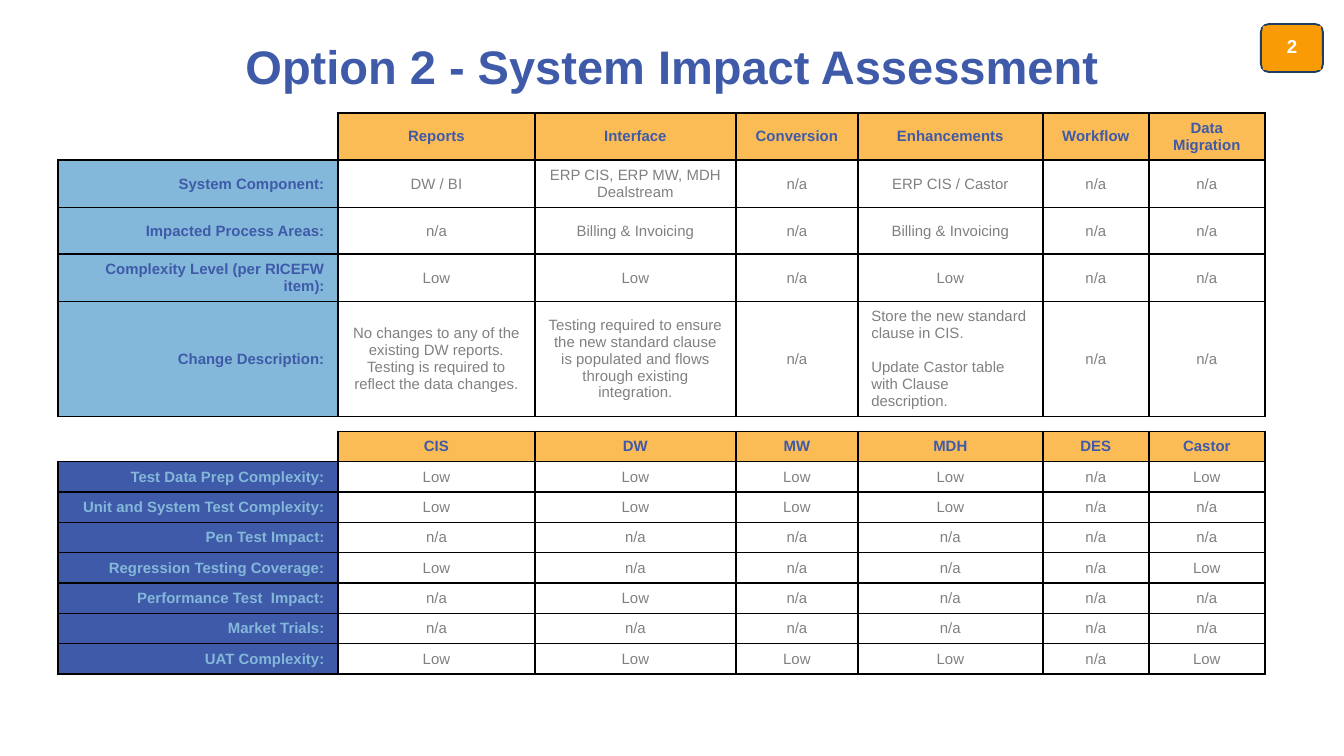
"""Build the Option 2 system impact assessment slide."""
import lxml.etree
import pptx
import pptx.dml.color
import pptx.enum.shapes
import pptx.enum.text
import pptx.oxml.ns
import pptx.util

HUES = {"navy": "3E5AA8", "sky": "84B8DA", "gold": "FCBC55", "grey": "808080",
        "amber": "F89B04", "ink": "1D3E61", "white": "FFFFFF", "black": "000000"}

TITLE = "Option 2 - System Impact Assessment"
PAGE = "2"
IMPACT = [
    ["", "Reports", "Interface", "Conversion", "Enhancements", "Workflow", "Data Migration"],
    ["System Component:", "DW / BI", "ERP CIS, ERP MW, MDH Dealstream", "n/a",
     "ERP CIS / Castor", "n/a", "n/a"],
    ["Impacted Process Areas:", "n/a", "Billing & Invoicing", "n/a",
     "Billing & Invoicing", "n/a", "n/a"],
    ["Complexity Level (per RICEFW item):", "Low", "Low", "n/a", "Low", "n/a", "n/a"],
    ["Change Description:",
     "No changes to any of the existing DW reports. "
     "Testing is required to reflect the data changes.",
     "Testing required to ensure the new standard clause is populated "
     "and flows through existing integration.",
     "n/a",
     "Store the new standard clause in CIS.\nUpdate Castor table with Clause description.",
     "n/a", "n/a"],
]
TESTS = [
    ["", "CIS", "DW", "MW", "MDH", "DES", "Castor"],
    ["Test Data Prep Complexity:", "Low", "Low", "Low", "Low", "n/a", "Low"],
    ["Unit and System Test Complexity:", "Low", "Low", "Low", "Low", "n/a", "n/a"],
    ["Pen Test Impact:", "n/a", "n/a", "n/a", "n/a", "n/a", "n/a"],
    ["Regression Testing Coverage:", "Low", "n/a", "n/a", "n/a", "n/a", "Low"],
    ["Performance Test  Impact:", "n/a", "Low", "n/a", "n/a", "n/a", "n/a"],
    ["Market Trials:", "n/a", "n/a", "n/a", "n/a", "n/a", "n/a"],
    ["UAT Complexity:", "Low", "Low", "Low", "Low", "n/a", "Low"],
]
ROWS = IMPACT + [[""] * 7] + TESTS
GAP = len(IMPACT)
WIDTHS = [280, 197, 201, 122, 185, 106, 116]
HEIGHTS = [47] * 4 + [115, 15] + [30] * len(TESTS)
SIDES = {"lnL": (0, -1), "lnR": (0, 1), "lnT": (-1, 0), "lnB": (1, 0)}
ALIGN = pptx.enum.text.PP_ALIGN
SHAPE = pptx.enum.shapes.MSO_SHAPE


def px(*nums):
    return [pptx.util.Emu(round(n * 914400 / 134.4)) for n in nums]


def rgb(hue):
    return pptx.dml.color.RGBColor.from_string(HUES[hue])


def put(frame, text, size=8, hue="grey", bold=False, align=ALIGN.CENTER, gap=0, lead=None):
    frame.word_wrap = True
    frame.vertical_anchor = pptx.enum.text.MSO_ANCHOR.MIDDLE
    for num, line in enumerate(text.split("\n")):
        para = frame.add_paragraph() if num else frame.paragraphs[0]
        para.alignment = align
        para.line_spacing = lead
        if num:
            para.space_before = pptx.util.Pt(gap)
        run = para.add_run()
        run.text = line
        run.font.name = "Arial"
        run.font.size = pptx.util.Pt(size)
        run.font.bold = bold
        run.font.color.rgb = rgb(hue)


def inked(row, col):
    return 0 <= row < len(ROWS) and 0 <= col < len(WIDTHS) and bool(ROWS[row][col])


def edge(cell, row, col):
    props = cell._tc.get_or_add_tcPr()
    name = pptx.oxml.ns.qn
    for side, (down, right) in SIDES.items():
        line = lxml.etree.SubElement(props, name("a:" + side), w="12700")
        if inked(row, col) or inked(row + down, col + right):
            fill = lxml.etree.SubElement(line, name("a:solidFill"))
            lxml.etree.SubElement(fill, name("a:srgbClr"), val=HUES["black"])
        else:
            lxml.etree.SubElement(line, name("a:noFill"))


def style(row, col):
    if row in (0, GAP + 1):
        return "gold", dict(hue="navy", bold=True)
    if col == 0:
        fill, hue = ("sky", "navy") if row < GAP else ("navy", "sky")
        return fill, dict(hue=hue, bold=True, align=ALIGN.RIGHT)
    if "\n" in ROWS[row][col]:
        return None, dict(align=ALIGN.LEFT, gap=9.2)
    return None, {}


def grid(slide):
    box = px(58, 113, sum(WIDTHS), sum(HEIGHTS))
    table = slide.shapes.add_table(len(ROWS), len(WIDTHS), *box).table
    table.first_row = table.horz_banding = False
    for col, wide in zip(table.columns, px(*WIDTHS)):
        col.width = wide
    for row, high in zip(table.rows, px(*HEIGHTS)):
        row.height = high
    for row, texts in enumerate(ROWS):
        for col, text in enumerate(texts):
            cell = table.cell(row, col)
            edge(cell, row, col)
            fill, form = style(row, col)
            if text and fill:
                cell.fill.solid()
                cell.fill.fore_color.rgb = rgb(fill)
            else:
                cell.fill.background()
            if text:
                cell.vertical_anchor = pptx.enum.text.MSO_ANCHOR.MIDDLE
                put(cell.text_frame, text, **form)
            else:
                cell.margin_top = cell.margin_bottom = 0
                para = cell.text_frame.paragraphs[0]
                para._p.get_or_add_endParaRPr().set("sz", "400")


def plate(group, kind, box):
    shape = group.shapes.add_shape(kind, *px(*box))
    shape.shadow.inherit = False
    shape.fill.solid()
    shape.fill.fore_color.rgb = rgb("amber")
    return shape


def badge(slide):
    group = slide.shapes.add_group_shape()
    back = plate(group, SHAPE.ROUNDED_RECTANGLE, (1261, 24, 62, 48))
    back.line.color.rgb = rgb("ink")
    back.line.width = pptx.util.Pt(1)
    face = plate(group, SHAPE.RECTANGLE, (1263, 26, 58, 44))
    face.line.fill.background()
    frame = face.text_frame
    frame.margin_left = frame.margin_right = frame.margin_top = frame.margin_bottom = px(5)[0]
    put(frame, PAGE, size=10, hue="white", bold=True, lead=0.9)


def main():
    deck = pptx.Presentation()
    deck.slide_width, deck.slide_height = px(1344, 756)
    slide = deck.slides.add_slide(deck.slide_layouts[5])
    title = slide.shapes.title
    title.left, title.top, title.width, title.height = px(67, 39, 1210, 53)
    put(title.text_frame, TITLE, size=25.2, hue="navy", bold=True)
    title.text_frame.auto_size = pptx.enum.text.MSO_AUTO_SIZE.NONE
    grid(slide)
    badge(slide)
    deck.save("out.pptx")


if __name__ == "__main__":
    main()
